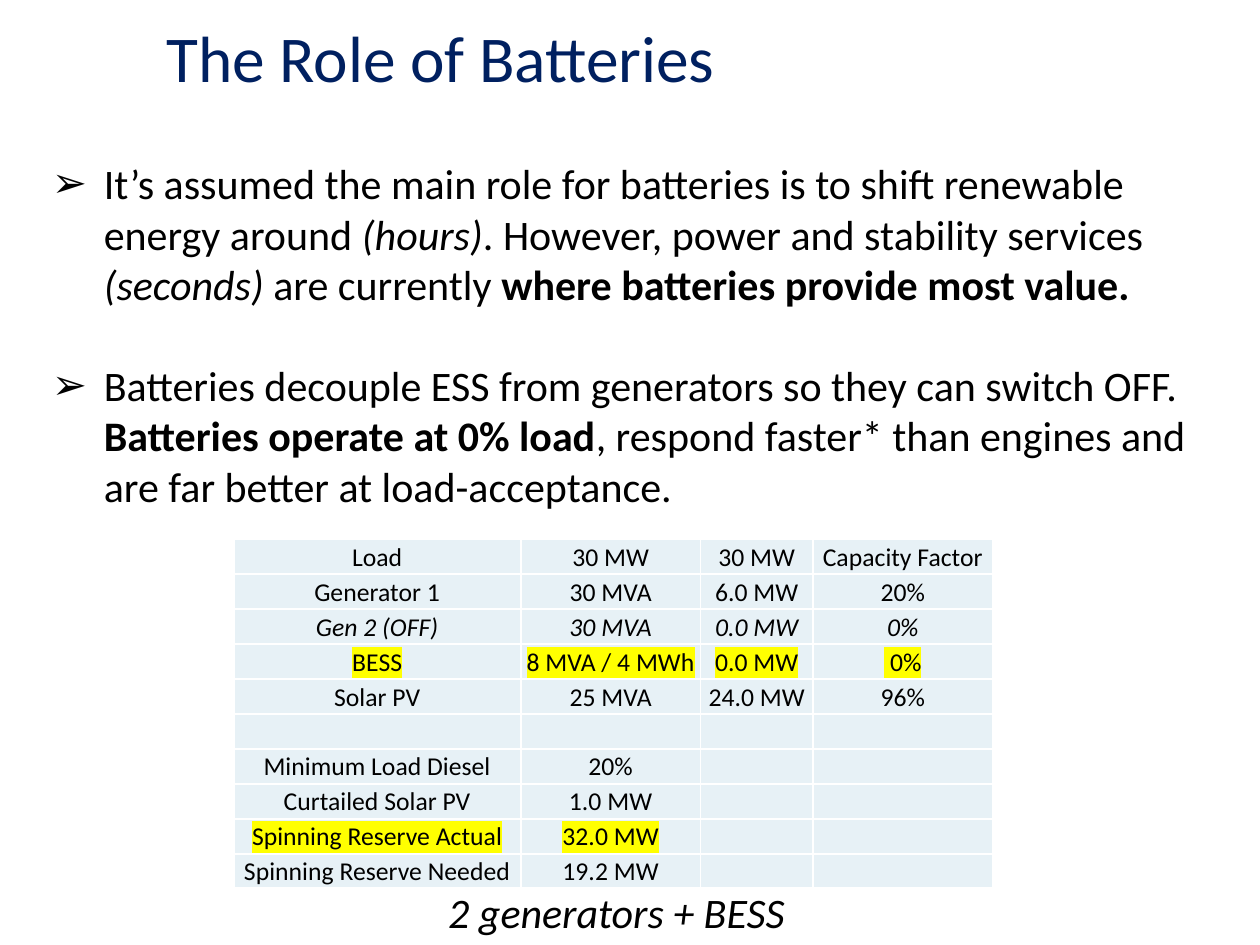
import pptx
import pptx.dml.color
import pptx.enum.text
import pptx.oxml.ns
import pptx.util
from lxml import etree
from pptx.util import Inches

FONT = "Calibri"
SLIDE_WIDTH = 7.5
SLIDE_HEIGHT = SLIDE_WIDTH * 3 / 4
COLORS = {"title": "002060", "text": "000000", "cell": "E7F1F6",
          "border": "FFFFFF", "highlight": "FFFF00"}
BULLETS = [
    [("It’s assumed the main role for batteries is to shift renewable energy around ", {}),
     ("(hours)", {"italic": True}),
     (". However, power and stability services ", {}),
     ("(seconds)", {"italic": True}),
     (" are currently ", {}),
     ("where batteries provide most value.", {"bold": True})],
    [("Batteries decouple ESS from generators so they can switch OFF. ", {}),
     ("Batteries operate at 0% load", {"bold": True}),
     (", respond faster* than engines and are far better at load-acceptance.", {})],
]
CAPACITY_ROWS = [
    ["Load", "30 MW", "30 MW", "Capacity Factor"],
    ["Generator 1", "30 MVA", "6.0 MW", "20%"],
    ["Gen 2 (OFF)", "30 MVA", "0.0 MW", "0%"],
    ["BESS", "8 MVA / 4 MWh", "0.0 MW", " 0%"],
    ["Solar PV", "25 MVA", "24.0 MW", "96%"],
    ["", "", "", ""],
    ["Minimum Load Diesel", "20%", "", ""],
    ["Curtailed Solar PV", "1.0 MW", "", ""],
    ["Spinning Reserve Actual", "32.0 MW", "", ""],
    ["Spinning Reserve Needed", "19.2 MW", "", ""],
]
COLUMN_WIDTHS = [1.71, 1.07, 0.67, 1.07]
TABLE_HEIGHT = 2.08
ITALIC_ROWS = {"Gen 2 (OFF)"}
HIGHLIGHTED_ROWS = {"BESS", "Spinning Reserve Actual"}


def rgb(name):
    """Return the named colour."""
    return pptx.dml.color.RGBColor.from_string(COLORS[name])


def add_element(parent, tag, **attributes):
    """Append a drawing element to its parent."""
    return etree.SubElement(parent, pptx.oxml.ns.qn(tag), attributes)


def set_attributes(target, values):
    """Set every attribute given in a dict."""
    for name, value in values.items():
        setattr(target, name, value)


def add_run(paragraph, text, size, color="text", **styles):
    """Add one formatted run to a paragraph."""
    run = paragraph.add_run()
    run.text = text
    set_attributes(run.font, {"name": FONT, "size": pptx.util.Pt(size), **styles})
    run.font.color.rgb = rgb(color)
    return run


def highlight(run):
    """Mark a run with the highlight colour."""
    properties = run.font._element
    mark = add_element(properties, "a:highlight")
    add_element(mark, "a:srgbClr", val=COLORS["highlight"])
    properties.find(pptx.oxml.ns.qn("a:solidFill")).addnext(mark)


def add_title(slide, text):
    """Place and format the slide title."""
    title = slide.shapes.title
    set_attributes(title, {"left": Inches(0.99), "top": Inches(0.1),
                           "width": Inches(6.31), "height": Inches(0.32)})
    set_attributes(title.text_frame, {
        "margin_left": 0, "margin_top": 0, "margin_right": 0, "margin_bottom": 0,
        "word_wrap": True, "auto_size": pptx.enum.text.MSO_AUTO_SIZE.NONE,
        "vertical_anchor": pptx.enum.text.MSO_ANCHOR.TOP})
    heading = title.text_frame.paragraphs[0]
    heading.alignment = pptx.enum.text.PP_ALIGN.LEFT
    add_run(heading, text, 28, "title")


def add_text_frame(slide, left, top, width, height):
    """Add a wrapping text box and return its frame."""
    box = slide.shapes.add_textbox(*map(Inches, (left, top, width, height)))
    box.text_frame.word_wrap = True
    return box.text_frame


def add_bullets(slide):
    """Add the arrow-bulleted statements."""
    frame = add_text_frame(slide, 0.21, 0.89, 7.01, 2.22)
    for index, statement in enumerate(BULLETS):
        paragraph = frame.add_paragraph() if index else frame.paragraphs[0]
        properties = paragraph._p.get_or_add_pPr()
        properties.set("marL", str(Inches(0.31)))
        properties.set("indent", str(-Inches(0.31)))
        add_element(properties, "a:buFont", typeface="Arial")
        add_element(properties, "a:buChar", char="➢")
        if index:
            paragraph.space_before = pptx.util.Pt(21.6)
        for text, styles in statement:
            add_run(paragraph, text, 18, **styles)


def format_cell(cell):
    """Give a cell its margins, white borders and fill."""
    set_attributes(cell, {
        "margin_left": Inches(0.01), "margin_top": Inches(0.01),
        "margin_right": Inches(0.01), "margin_bottom": 0,
        "vertical_anchor": pptx.enum.text.MSO_ANCHOR.MIDDLE})
    properties = cell._tc.get_or_add_tcPr()
    for side in "LRTB":
        border = add_element(properties, f"a:ln{side}", w=str(pptx.util.Pt(1)))
        fill = add_element(border, "a:solidFill")
        add_element(fill, "a:srgbClr", val=COLORS["border"])
    cell.fill.solid()
    cell.fill.fore_color.rgb = rgb("cell")


def add_capacity_table(slide):
    """Add the table of generation capacity and reserve."""
    table = slide.shapes.add_table(
        len(CAPACITY_ROWS), len(COLUMN_WIDTHS), Inches(1.39), Inches(3.21),
        Inches(sum(COLUMN_WIDTHS)), Inches(TABLE_HEIGHT)).table
    set_attributes(table, {"first_row": False, "horz_banding": False})
    for column, width in zip(table.columns, COLUMN_WIDTHS):
        column.width = Inches(width)
    for row, values in zip(table.rows, CAPACITY_ROWS):
        row.height = Inches(TABLE_HEIGHT / len(CAPACITY_ROWS))
        for cell, value in zip(row.cells, values):
            format_cell(cell)
            paragraph = cell.text_frame.paragraphs[0]
            paragraph.alignment = pptx.enum.text.PP_ALIGN.CENTER
            if not value:
                add_element(paragraph._p, "a:endParaRPr", sz="1100")
                continue
            run = add_run(paragraph, value, 11, italic=values[0] in ITALIC_ROWS)
            if values[0] in HIGHLIGHTED_ROWS:
                highlight(run)


def add_caption(slide, text):
    """Add the caption under the table."""
    frame = add_text_frame(slide, 2.57, 5.23, 3.54, 0.4)
    add_run(frame.paragraphs[0], text, 18, italic=True)


def main():
    """Build and save the slide."""
    deck = pptx.Presentation()
    set_attributes(deck, {"slide_width": Inches(SLIDE_WIDTH),
                          "slide_height": Inches(SLIDE_HEIGHT)})
    slide = deck.slides.add_slide(deck.slide_layouts[5])
    add_title(slide, "The Role of Batteries")
    add_bullets(slide)
    add_capacity_table(slide)
    add_caption(slide, "2 generators + BESS")
    deck.save("out.pptx")


if __name__ == "__main__":
    main()
